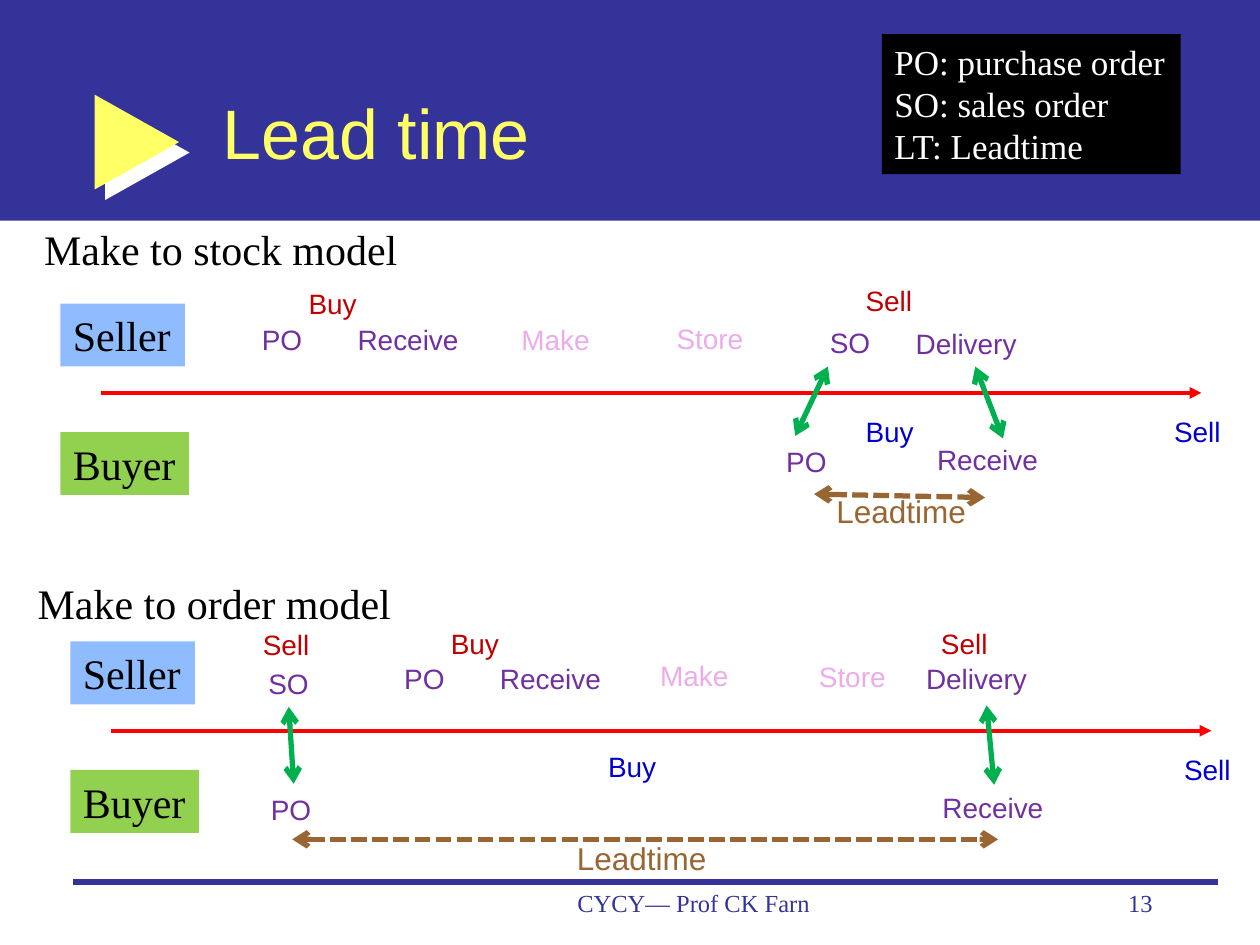
from dataclasses import dataclass
from typing import Optional

from lxml.etree import SubElement
from pptx import Presentation
from pptx.dml.color import RGBColor
from pptx.enum.dml import MSO_LINE
from pptx.enum.shapes import MSO_CONNECTOR, MSO_SHAPE
from pptx.enum.text import MSO_ANCHOR, MSO_AUTO_SIZE, PP_ALIGN
from pptx.oxml.ns import qn
from pptx.util import Cm, Pt

NAVY = RGBColor(0x33, 0x33, 0x99)
YELLOW = RGBColor(0xFF, 0xFF, 0x66)
WHITE = RGBColor(0xFF, 0xFF, 0xFF)
BLACK = RGBColor(0, 0, 0)
RED = RGBColor(0xFF, 0, 0)
CRIMSON = RGBColor(0xC0, 0, 0)
PINK = RGBColor(0xED, 0xAB, 0xEB)
PURPLE = RGBColor(0x70, 0x30, 0xA0)
BLUE = RGBColor(0, 0, 0xCC)
GREEN = RGBColor(0, 0xB0, 0x50)
BROWN = RGBColor(0x99, 0x66, 0x33)
SKY = RGBColor(0x8F, 0xBC, 0xFF)
LIME = RGBColor(0x92, 0xD0, 0x50)

SANS, SERIF = "Arial", "Times New Roman"
WIDTHS = {"Buy": 1.5, "Sell": 1.45, "PO": 1.35, "SO": 1.35, "Make": 1.9,
          "Store": 1.88, "Receive": 2.57, "Delivery": 2.57}


@dataclass
class Label:
    text: str
    x: float
    y: float
    color: RGBColor


@dataclass
class Arrow:
    x1: float
    y1: float
    x2: float
    y2: float


@dataclass
class Model:
    title: Label
    dx: float
    dy: float
    labels: list[Label]
    links: list[Arrow]
    lead: Label
    span: Arrow


MODELS = [
    Model(
        Label("Make to stock model", 0.64, 4.39, BLACK), 0, 0,
        [Label("Buy", 5.97, 5.66, CRIMSON), Label("Make", 10.26, 6.38, PINK),
         Label("Store", 13.39, 6.35, PINK), Label("Buy", 17.2, 8.23, BLUE),
         Label("Sell", 17.2, 5.59, CRIMSON), Label("PO", 5.03, 6.38, PURPLE),
         Label("Receive", 6.96, 6.38, PURPLE), Label("SO", 16.48, 6.43, PURPLE),
         Label("Delivery", 18.21, 6.45, PURPLE), Label("PO", 15.6, 8.84, PURPLE),
         Label("Receive", 18.64, 8.79, PURPLE)],
        [Arrow(16.03, 8.79, 16.69, 7.39), Arrow(20.22, 8.84, 19.66, 7.39)],
        Label("Leadtime", 16.61, 9.8, BROWN), Arrow(16.41, 9.96, 19.86, 10.03)),
    Model(
        Label("Make to order model", 0.51, 11.51, BLACK), 0.2, 6.81,
        [Label("Buy", 8.84, 12.5, CRIMSON), Label("Make", 13.06, 13.16, PINK),
         Label("Store", 16.26, 13.18, PINK), Label("Buy", 12.01, 14.99, BLUE),
         Label("Sell", 18.72, 12.5, CRIMSON), Label("PO", 7.9, 13.21, PURPLE),
         Label("Receive", 9.83, 13.21, PURPLE),
         Label("Delivery", 18.42, 13.21, PURPLE),
         Label("PO", 5.21, 15.85, PURPLE), Label("Receive", 18.75, 15.82, PURPLE),
         Label("Sell", 5.05, 12.52, CRIMSON), Label("SO", 5.16, 13.31, PURPLE)],
        [Arrow(5.92, 15.8, 5.82, 14.25), Arrow(20.04, 15.82, 19.89, 14.22)],
        Label("Leadtime", 11.38, 16.79, BROWN), Arrow(5.89, 16.92, 20.12, 16.92)),
]


def form(shapes, kind: MSO_SHAPE, x: float, y: float, w: float, h: float,
         fill: RGBColor):
    shape = shapes.add_shape(kind, Cm(x), Cm(y), Cm(w), Cm(h))
    shape.shadow.inherit = False
    shape.fill.solid()
    shape.fill.fore_color.rgb = fill
    shape.line.fill.background()
    return shape


def write(shapes, item: Label, w: float, h: float, size: int, font: str = SANS,
          fill: Optional[RGBColor] = None, align: PP_ALIGN = PP_ALIGN.LEFT,
          anchor: MSO_ANCHOR = MSO_ANCHOR.TOP, wrap: bool = False) -> None:
    if fill is None:
        box = shapes.add_textbox(Cm(item.x), Cm(item.y), Cm(w), Cm(h))
    else:
        box = form(shapes, MSO_SHAPE.RECTANGLE, item.x, item.y, w, h, fill)
    frame = box.text_frame
    frame.text = item.text
    frame.word_wrap = wrap
    frame.auto_size = MSO_AUTO_SIZE.NONE if wrap else MSO_AUTO_SIZE.SHAPE_TO_FIT_TEXT
    frame.vertical_anchor = anchor
    for para in frame.paragraphs:
        para.alignment = align
        for run in para.runs:
            run.font.name = font
            run.font.size = Pt(size)
            run.font.color.rgb = item.color


def draw(shapes, way: Arrow, color: RGBColor, width: float, head: str = "",
         tail: str = "", dash: Optional[MSO_LINE] = None) -> None:
    line = shapes.add_connector(MSO_CONNECTOR.STRAIGHT, Cm(way.x1), Cm(way.y1),
                                Cm(way.x2), Cm(way.y2))
    line.line.color.rgb = color
    line.line.width = Pt(width)
    if dash is not None:
        line.line.dash_style = dash
    props = line.line._get_or_add_ln()
    for tag, kind in (("a:headEnd", head), ("a:tailEnd", tail)):
        if kind:
            SubElement(props, qn(tag), type=kind)
    SubElement(line._element.spPr, qn("a:effectLst"))


def banner(shapes) -> None:
    form(shapes, MSO_SHAPE.RECTANGLE, 0, 0, 25.4, 4.45, NAVY)
    mark = form(shapes, MSO_SHAPE.RIGHT_ARROW, 1.91, 1.91, 1.7, 1.91, YELLOW)
    mark.adjustments[0] = 0.38
    mark.adjustments[1] = 1
    glow = SubElement(mark._element.spPr.find(qn("a:effectLst")),
                      qn("a:outerShdw"), dist=str(Pt(8.5)), dir="2700000",
                      algn="ctr", rotWithShape="0")
    SubElement(glow, qn("a:srgbClr"), val=str(WHITE))
    draw(shapes, Arrow(1.47, 17.78, 24.56, 17.78), NAVY, 3)
    write(shapes, Label("CYCY— Prof CK Farn", 9.96, 17.78, NAVY), 8.05, 1.27, 14,
          SERIF, align=PP_ALIGN.CENTER, wrap=True)
    write(shapes, Label("13", 18.21, 17.78, NAVY), 5.28, 1.27, 14, SERIF,
          align=PP_ALIGN.RIGHT, wrap=True)
    write(shapes, Label("Lead time", 4.24, 1.07, YELLOW), 19.25, 3.17, 40,
          anchor=MSO_ANCHOR.MIDDLE, wrap=True)


def chain(shapes, model: Model) -> None:
    dx, dy = model.dx, model.dy
    group = shapes.add_group_shape().shapes
    draw(group, Arrow(2.03 + dx, 7.92 + dy, 24.22 + dx, 7.92 + dy), RED, 2.25,
         tail="triangle")
    write(group, Label("Seller", 1.22 + dx, 6.12 + dy, BLACK), 2.51, 1.27, 24,
          SERIF, SKY)
    write(group, Label("Buyer", 1.22 + dx, 8.71 + dy, BLACK), 2.59, 1.27, 24,
          SERIF, LIME)
    for item in [*model.labels, Label("Sell", 23.42 + dx, 8.23 + dy, BLUE)]:
        write(group, item, WIDTHS[item.text], 0.94, 16)
    for link in model.links:
        draw(group, link, GREEN, 3, "arrow", "arrow")


def main() -> None:
    deck = Presentation()
    deck.slide_width, deck.slide_height = Cm(25.4), Cm(19.05)
    shapes = deck.slides.add_slide(deck.slide_layouts[6]).shapes
    banner(shapes)
    for model in MODELS:
        chain(shapes, model)
    for model in MODELS:
        write(shapes, model.lead, 3.15, 1.02, 18)
        draw(shapes, model.span, BROWN, 3, "arrow", "arrow", MSO_LINE.SQUARE_DOT)
        write(shapes, model.title, 7.7, 1.27, 24, SERIF)
    legend = "PO: purchase order\nSO: sales order\nLT: Leadtime"
    write(shapes, Label(legend, 17.78, 0.69, WHITE), 6.02, 2.82, 20, SERIF, BLACK)
    deck.save("out.pptx")


if __name__ == "__main__":
    main()
